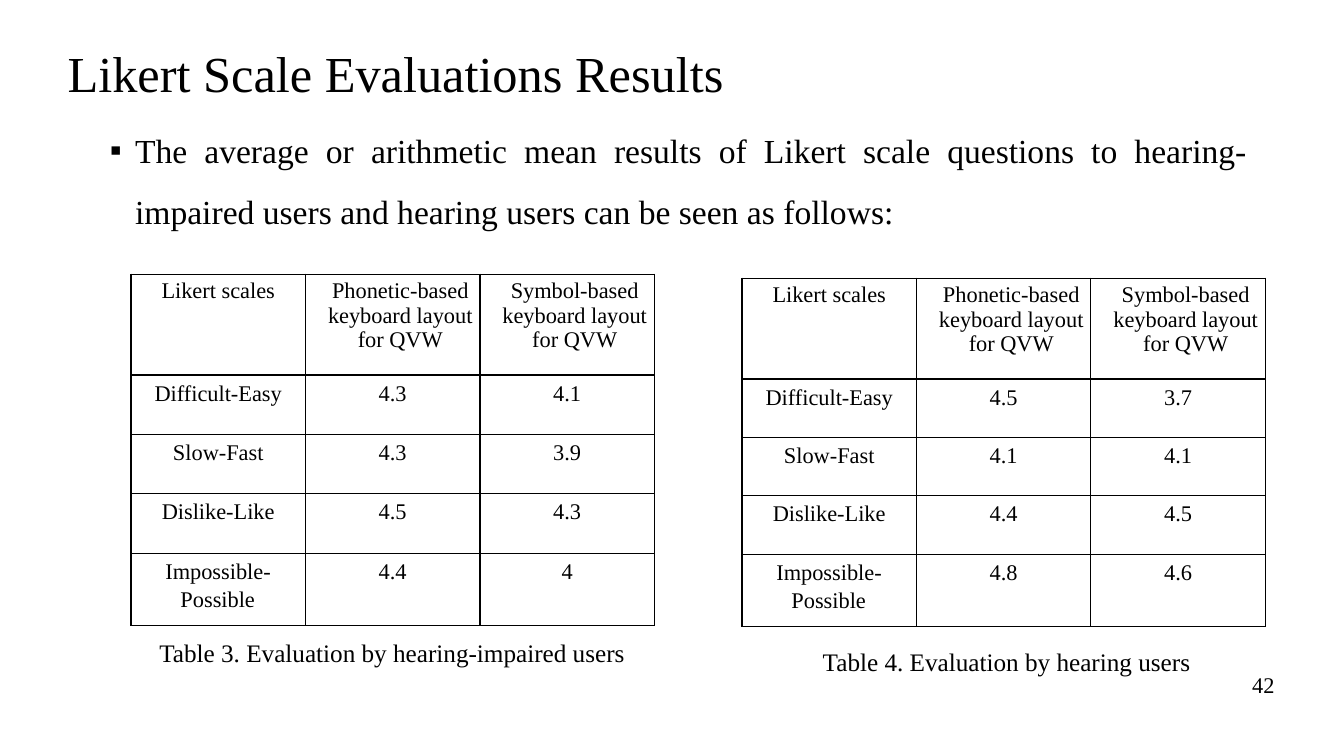
from lxml import etree
from pptx import Presentation
from pptx.dml.color import RGBColor
from pptx.enum.text import MSO_ANCHOR, MSO_AUTO_SIZE, PP_ALIGN
from pptx.oxml.ns import qn
from pptx.util import Inches, Pt

BLACK = RGBColor(0x00, 0x00, 0x00)
FONT = "Times New Roman"
LEFT, CENTER, JUSTIFY = PP_ALIGN.LEFT, PP_ALIGN.CENTER, PP_ALIGN.JUSTIFY
TOP = MSO_ANCHOR.TOP
NO_AUTOFIT = MSO_AUTO_SIZE.NONE

COLUMN_WIDTH = 1.73
HEADER_HEIGHT, LAST_HEIGHT = 1, 0.72
HEADINGS = ["Likert scales",
            "Phonetic-based keyboard layout for QVW",
            "Symbol-based keyboard layout for QVW"]
SCALES = ["Difficult-Easy", "Slow-Fast", "Dislike-Like", "Impossible-Possible"]

# left, top, height of a middle row, mean scores (phonetic, symbol)
EVALUATIONS = [
    (1.3, 2.72, 0.59, [("4.3", "4.1"), ("4.3", "3.9"), ("4.5", "4.3"), ("4.4", "4")]),
    (7.36, 2.76, 0.58, [("4.5", "3.7"), ("4.1", "4.1"), ("4.4", "4.5"), ("4.8", "4.6")]),
]
# text, left, top, width, height, size
LABELS = [
    ("Table 3. Evaluation by hearing-impaired users", 1.58, 6.31, 4.75, 0.33, 18),
    ("Table 4. Evaluation by hearing users", 8.16, 6.4, 3.78, 0.33, 18),
    ("42", 12.42, 6.65, 0.3, 0.29, 16),
]


def write(frame, text, size, align=LEFT, before=1):
    """Fill a text frame with one black paragraph and return it."""
    frame.text = text
    paragraph = frame.paragraphs[0]
    paragraph.alignment = align
    paragraph.space_before = Pt(before)
    font = paragraph.runs[0].font
    font.name, font.size, font.color.rgb = FONT, Pt(size), BLACK
    return paragraph


def place(shape, left, top, width, height):
    """Position a text shape and remove its insets, except a thin one on top."""
    shape.left, shape.top = Inches(left), Inches(top)
    shape.width, shape.height = Inches(width), Inches(height)
    frame = shape.text_frame
    frame.margin_left = frame.margin_right = frame.margin_bottom = 0
    frame.margin_top = Inches(0.01)
    frame.vertical_anchor = TOP
    frame.auto_size = NO_AUTOFIT
    frame.word_wrap = True
    return frame


prs = Presentation()
prs.slide_width, prs.slide_height = Inches(13.33), Inches(7.5)
slide = prs.slides.add_slide(prs.slide_layouts[1])
title, body = slide.placeholders

write(place(title, 0.67, 0.41, 8, 0.63), "Likert Scale Evaluations Results", 36)

intro = write(place(body, 1.08, 1.08, 11.29, 1.23),
              "The average or arithmetic mean results of Likert scale questions to "
              "hearing-impaired users and hearing users can be seen as follows:",
              24, JUSTIFY)
intro.line_spacing = 1.5
intro_props = intro._p.get_or_add_pPr()
intro_props.set("marL", str(Inches(0.26)))
intro_props.set("indent", str(Inches(-0.25)))
etree.SubElement(intro_props, qn("a:buFont"), typeface=FONT)
etree.SubElement(intro_props, qn("a:buChar"), char="▪")

for left, top, row_height, scores in EVALUATIONS:
    heights = [HEADER_HEIGHT] + [row_height] * 3 + [LAST_HEIGHT]
    rows = [HEADINGS] + [[scale, *means] for scale, means in zip(SCALES, scores)]
    table = slide.shapes.add_table(
        len(rows), len(HEADINGS), Inches(left), Inches(top),
        Inches(COLUMN_WIDTH * len(HEADINGS)), Inches(sum(heights))).table
    table.first_row = table.horz_banding = False
    for column in table.columns:
        column.width = Inches(COLUMN_WIDTH)

    for r, (height, texts) in enumerate(zip(heights, rows)):
        table.rows[r].height = Inches(height)
        for c, text in enumerate(texts):
            cell = table.cell(r, c)
            cell.margin_left = cell.margin_right = cell.margin_bottom = 0
            cell.margin_top = Inches(0.06 if r else 0.04)
            cell.vertical_anchor = TOP
            cell.fill.background()
            paragraph = write(cell.text_frame, text, 16, CENTER)
            paragraph_props = paragraph._p.get_or_add_pPr()
            if r == 0 and c > 0:
                paragraph_props.set("marL", str(Inches(0.15)))
            if text == SCALES[-1]:
                cell.margin_top = Inches(0.02)
                paragraph.alignment = LEFT
                paragraph.line_spacing = 1.15
                paragraph_props.set("marL", str(Inches(0.49)))
                paragraph_props.set("indent", str(Inches(-0.15)))
            cell_props = cell._tc.get_or_add_tcPr()
            for position, side in enumerate(("lnL", "lnR", "lnT", "lnB")):
                border = etree.Element(qn(f"a:{side}"), w=str(Pt(1)))
                border_fill = etree.SubElement(border, qn("a:solidFill"))
                etree.SubElement(border_fill, qn("a:srgbClr"), val=str(BLACK))
                cell_props.insert(position, border)

for text, left, top, width, height, size in LABELS:
    label = slide.shapes.add_textbox(0, 0, 0, 0)
    write(place(label, left, top, width, height), text, size)

prs.save("out.pptx")
